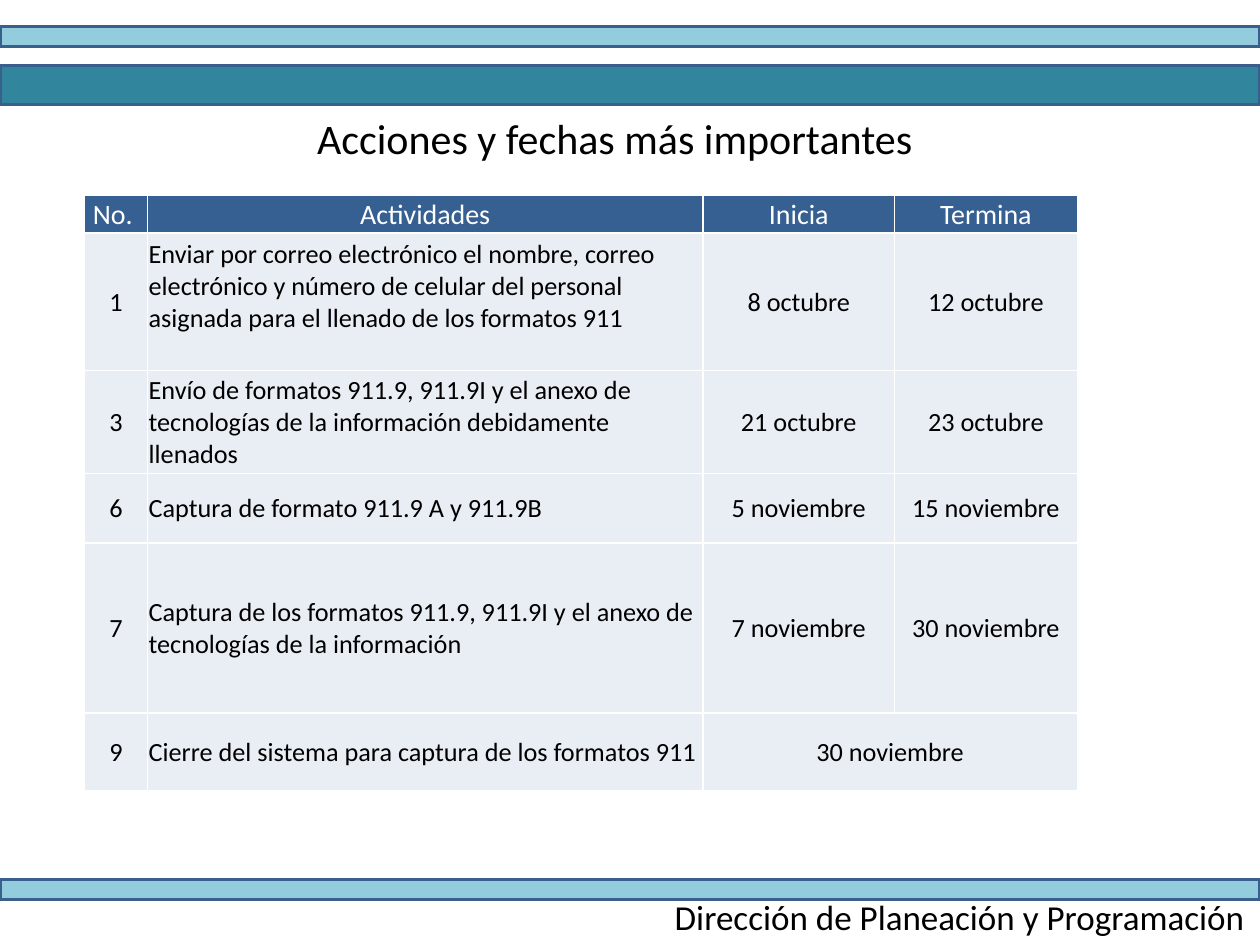
from lxml.etree import SubElement as Sub
from pptx import Presentation
from pptx.dml.color import RGBColor as RGB
from pptx.enum.shapes import MSO_SHAPE as Kind
from pptx.enum.text import MSO_ANCHOR as Anchor, PP_ALIGN as Align
from pptx.oxml.ns import qn
from pptx.util import Inches, Pt

INK = {"pale": "93CDDD", "teal": "31859C", "edge": "3A5F8C", "head": "376092",
       "cell": "E9EDF4", "white": "FFFFFF", "black": "000000"}
FONT = "Calibri"
WIDE, HIGH = 10, 7.5

# top, height, colour
BARS = [(0.21, 0.16, "pale"), (0.52, 0.31, "teal"), (6.98, 0.16, "pale")]

# text, left, top, height, size, alignment
LABELS = [
    ("Acciones y fechas más importantes", -0.12, 0.84, 0.5, 24, Align.CENTER),
    ("Dirección de Planeación y Programación ", 0.04, 7.06, 0.44, 20, Align.RIGHT),
]

COLS = [0.5, 4.41, 1.52, 1.45]
ROWS = [0.3, 1.09, 0.82, 0.55, 1.35, 0.62]
LEFT, TOP = 0.67, 1.55
PAD = 0.01
LIFT = {(1, 1): 0.25}  # bottom inset that raises a cell's text
DATA = [
    ("No. ", "Actividades", "Inicia", "Termina"),
    ("1", "Enviar por correo electrónico el nombre, correo electrónico y número "
     "de celular del personal asignada para el llenado de los formatos 911",
     "8 octubre", "12 octubre"),
    ("3", "Envío de formatos 911.9, 911.9I y el anexo de tecnologías de la "
     "información debidamente llenados", "21 octubre", "23 octubre"),
    ("6", "Captura de formato 911.9 A y 911.9B", "5 noviembre", "15 noviembre"),
    ("7", "Captura de los formatos 911.9, 911.9I y el anexo de tecnologías de la "
     "información", "7 noviembre", "30 noviembre"),
    ("9", "Cierre del sistema para captura de los formatos 911", "30 noviembre", None),
]


def paint(fill, name):
    fill.solid()
    fill.fore_color.rgb = RGB.from_string(INK[name])


def write(frame, text, size, tint, align):
    para = frame.paragraphs[0]
    para.alignment = align
    run = para.add_run()
    run.text = text
    run.font.name, run.font.size = FONT, Pt(size)
    run.font.color.rgb = RGB.from_string(INK[tint])


def edge(cell):
    """Draw a white one-point border on all four sides."""
    props = cell._tc.get_or_add_tcPr()
    for side in ("a:lnL", "a:lnR", "a:lnT", "a:lnB"):
        line = Sub(props, qn(side), w=str(Pt(1)))
        Sub(Sub(line, qn("a:solidFill")), qn("a:srgbClr"), val=INK["white"])


def add_bar(slide, top, high, tint):
    bar = slide.shapes.add_shape(Kind.RECTANGLE, 0, Inches(top), Inches(WIDE), Inches(high))
    bar.shadow.inherit = False
    paint(bar.fill, tint)
    paint(bar.line.fill, "edge")
    bar.line.width = Pt(2)


def add_label(slide, text, left, top, high, size, align):
    box = slide.shapes.add_textbox(Inches(left), Inches(top), Inches(WIDE), Inches(high))
    box.text_frame.word_wrap = True
    write(box.text_frame, text, size, "black", align)


def add_grid(slide):
    grid = slide.shapes.add_table(
        len(ROWS), len(COLS), Inches(LEFT), Inches(TOP),
        Inches(sum(COLS)), Inches(sum(ROWS))).table
    for col, wide in zip(grid.columns, COLS):
        col.width = Inches(wide)
    for row, high in zip(grid.rows, ROWS):
        row.height = Inches(high)
    for r, line in enumerate(DATA):
        for c, text in enumerate(line):
            cell = grid.cell(r, c)
            edge(cell)
            paint(cell.fill, "cell" if r else "head")
            cell.vertical_anchor = Anchor.MIDDLE
            cell.margin_left = cell.margin_right = cell.margin_top = Inches(PAD)
            cell.margin_bottom = Inches(LIFT.get((r, c), 0))
            if text is None:
                grid.cell(r, c - 1).merge(cell)
                continue
            align = Align.LEFT if r and c == 1 else Align.CENTER
            size, tint = (15, "black") if r else (16, "white")
            write(cell.text_frame, text, size, tint, align)


def main():
    deck = Presentation()
    deck.slide_width, deck.slide_height = Inches(WIDE), Inches(HIGH)
    slide = deck.slides.add_slide(deck.slide_layouts[6])
    for bar in BARS:
        add_bar(slide, *bar)
    add_grid(slide)
    for label in LABELS:
        add_label(slide, *label)
    deck.save("out.pptx")


if __name__ == "__main__":
    main()
